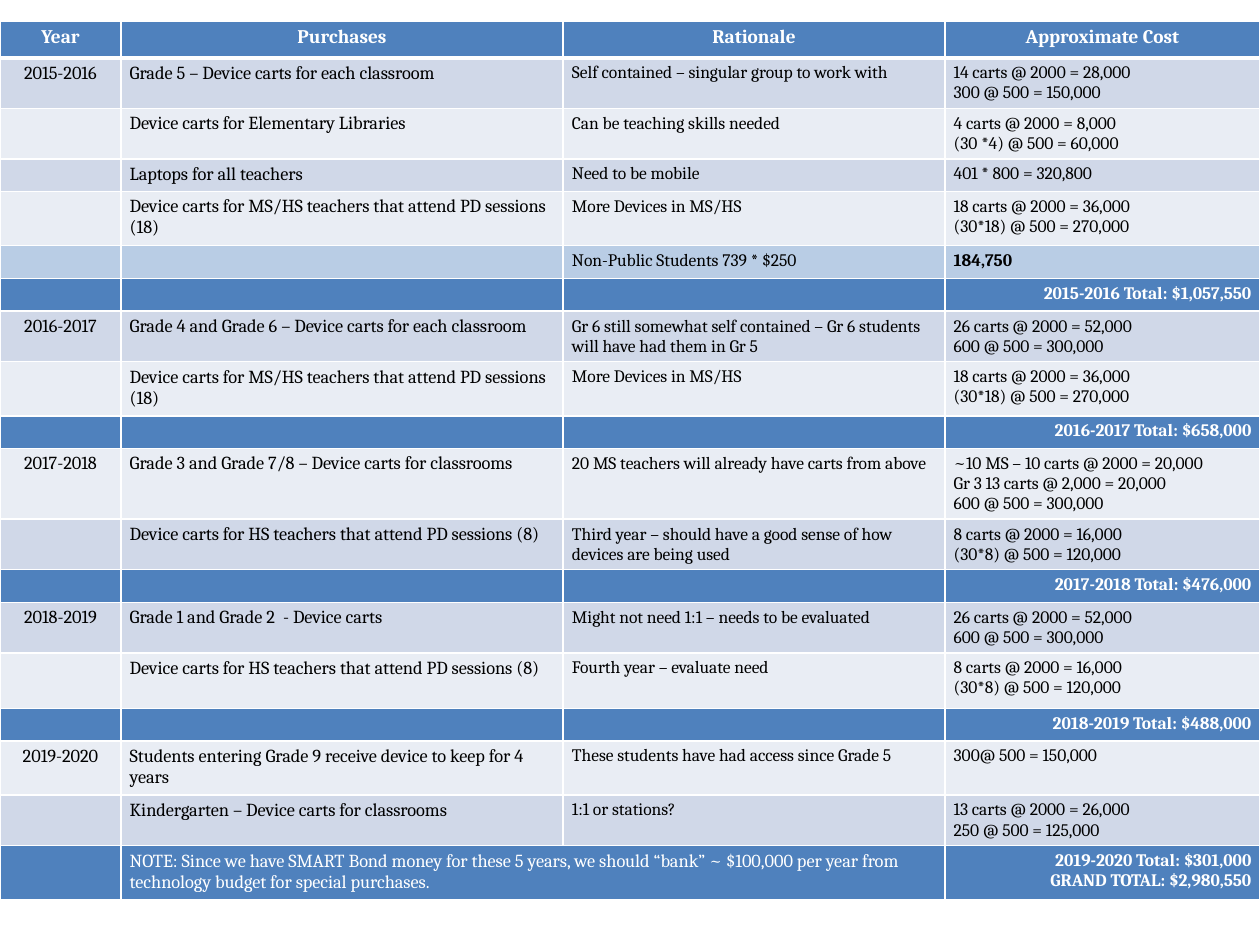
"""Build the five-year device purchase plan as one table slide."""
from dataclasses import dataclass

import pptx
import pptx.dml.color
import pptx.enum.text
import pptx.oxml
import pptx.oxml.ns
import pptx.util

GRID_COLS, GRID_ROWS = 1000, 750
COL_SPANS = (96, 351, 303, 250)
TABLE_TOP = 17
FONT = "Cambria"
BLUE, WHITE, BLACK = "4F81BD", "FFFFFF", "000000"
BANDS = ("E9EDF4", "D0D8E8")
SIZES = (10.5, 10.5, 10, 10)
ALIGN = pptx.enum.text.PP_ALIGN
MARGINS = {"margin_left": 0.07, "margin_right": 0.07, "margin_top": 0.04, "margin_bottom": 0.04}


@dataclass
class PlanRow:
    """One table row: its height in grid rows, its texts and its kind."""
    height: int
    texts: tuple[str, str, str, str]
    kind: str = "item"


def total(text: str, height: int = 26, note: str = "") -> PlanRow:
    """Return a blue row that closes a year."""
    return PlanRow(height, ("", note, "", text), "total")


MS_HS = PlanRow(43, ("", "Device carts for MS/HS teachers that attend PD sessions (18)",
                     "More Devices in MS/HS", "18 carts @ 2000 = 36,000\n(30*18) @ 500 = 270,000"))
HS_CARTS = "Device carts for HS teachers that attend PD sessions (8)"
HS_COST = "8 carts @ 2000 = 16,000\n(30*8) @ 500 = 120,000"
TWO_GRADES_COST = "26 carts @ 2000 = 52,000\n600 @ 500 = 300,000"

PLAN = [
    PlanRow(29, ("Year", "Purchases", "Rationale", "Approximate Cost"), "header"),
    PlanRow(40, ("2015-2016", "Grade 5 – Device carts for each classroom",
                 "Self contained – singular group to work with",
                 "14 carts @ 2000 = 28,000\n300 @ 500 = 150,000")),
    PlanRow(40, ("", "Device carts for Elementary Libraries", "Can be teaching skills needed",
                 "4 carts @ 2000 = 8,000\n(30 *4) @ 500 = 60,000")),
    PlanRow(26, ("", "Laptops for all teachers", "Need to be mobile", "401 * 800 = 320,800")),
    MS_HS,
    PlanRow(26, ("", "", "Non-Public Students 739 * $250", "184,750"), "extra"),
    total("2015-2016 Total: $1,057,550"),
    PlanRow(40, ("2016-2017", "Grade 4 and Grade 6 – Device carts for each classroom",
                 "Gr 6 still somewhat self contained – Gr 6 students will have had them in Gr 5",
                 TWO_GRADES_COST)),
    MS_HS,
    total("2016-2017 Total: $658,000"),
    PlanRow(56, ("2017-2018", "Grade 3 and Grade 7/8 – Device carts for classrooms",
                 "20 MS teachers will already have carts from above",
                 "~10 MS – 10 carts @ 2000 = 20,000\nGr 3 13 carts @ 2,000 = 20,000\n"
                 "600 @ 500 = 300,000")),
    PlanRow(40, ("", HS_CARTS,
                 "Third year – should have a good sense of how devices are being used", HS_COST)),
    total("2017-2018 Total: $476,000"),
    PlanRow(40, ("2018-2019", "Grade 1 and Grade 2  - Device carts",
                 "Might not need 1:1 – needs to be evaluated", TWO_GRADES_COST)),
    PlanRow(44, ("", HS_CARTS, "Fourth year – evaluate need", HS_COST)),
    total("2018-2019 Total: $488,000"),
    PlanRow(43, ("2019-2020", "Students entering Grade 9 receive device to keep for 4 years",
                 "These students have had access since Grade 5", "300@ 500 = 150,000")),
    PlanRow(40, ("", "Kindergarten – Device carts for classrooms", "1:1 or stations?",
                 "13 carts @ 2000 = 26,000\n250 @ 500 = 125,000")),
    total("2019-2020 Total: $301,000\nGRAND TOTAL: $2,980,550", 43,
          "NOTE: Since we have SMART Bond money for these 5 years, we should “bank” ~ $100,000 "
          "per year from technology budget for special purchases."),
]


def rgb(value: str) -> pptx.dml.color.RGBColor:
    """Turn a hex string into a colour."""
    return pptx.dml.color.RGBColor.from_string(value)


def set_borders(cell, row: int) -> None:
    """Give a cell white borders, thick under the header."""
    widths = {"L": 1, "R": 1, "T": 3 if row == 1 else 1, "B": 3 if row == 0 else 1}
    for side, width in widths.items():
        cell._tc.get_or_add_tcPr().append(pptx.oxml.parse_xml(
            f'<a:ln{side} {pptx.oxml.ns.nsdecls("a")} w="{pptx.util.Pt(width)}">'
            f'<a:solidFill><a:srgbClr val="{WHITE}"/></a:solidFill></a:ln{side}>'))


def row_fill(kind: str, row: int) -> str:
    """Choose the fill from the row's kind, or from its band."""
    return {"header": BLUE, "total": BLUE, "extra": "B9CDE5"}.get(kind, BANDS[row % 2])


def text_format(kind: str, col: int) -> dict:
    """Return the font values for a row kind and column."""
    header = kind == "header"
    return {"name": FONT, "size": pptx.util.Pt(11 if header else SIZES[col]),
            "bold": header or (col == 3 and kind != "item")}


def text_align(kind: str, col: int):
    """Return the alignment for a row kind and column."""
    if kind == "header" or col == 0:
        return ALIGN.CENTER
    return ALIGN.RIGHT if kind == "total" and col == 3 else ALIGN.LEFT


def write_cell(cell, text: str, kind: str, row: int, col: int) -> None:
    """Write and format one cell."""
    set_borders(cell, row)
    cell.fill.solid()
    cell.fill.fore_color.rgb = rgb(row_fill(kind, row))
    for name, inches in MARGINS.items():
        setattr(cell, name, pptx.util.Inches(inches))
    tf = cell.text_frame
    if not text:
        tf.paragraphs[0]._p.get_or_add_endParaRPr().set("sz", "1000")
        return
    tf.text = text
    for p in tf.paragraphs:
        p.alignment = text_align(kind, col)
        for r in p.runs:
            for name, value in text_format(kind, col).items():
                setattr(r.font, name, value)
            r.font.color.rgb = rgb(WHITE if kind in ("header", "total") else BLACK)


def add_plan(prs, s, plan: list[PlanRow]) -> None:
    """Place the plan table on the slide grid."""
    unit_x, unit_y = prs.slide_width // GRID_COLS, prs.slide_height // GRID_ROWS
    height = sum(item.height for item in plan) * unit_y
    table = s.shapes.add_table(len(plan), len(COL_SPANS), 0, TABLE_TOP * unit_y,
                               prs.slide_width, height).table
    for column, span in zip(table.columns, COL_SPANS):
        column.width = span * unit_x
    for row, item in enumerate(plan):
        table.rows[row].height = item.height * unit_y
        for col, text in enumerate(item.texts):
            write_cell(table.cell(row, col), text, item.kind, row, col)
    last = len(plan) - 1
    table.cell(last, 1).merge(table.cell(last, 2))


def main() -> None:
    """Build and save the slide."""
    prs = pptx.Presentation()
    prs.slide_width, prs.slide_height = pptx.util.Inches(10), pptx.util.Inches(7.5)
    s = prs.slides.add_slide(prs.slide_layouts[6])
    add_plan(prs, s, PLAN)
    prs.save("out.pptx")


if __name__ == "__main__":
    main()
